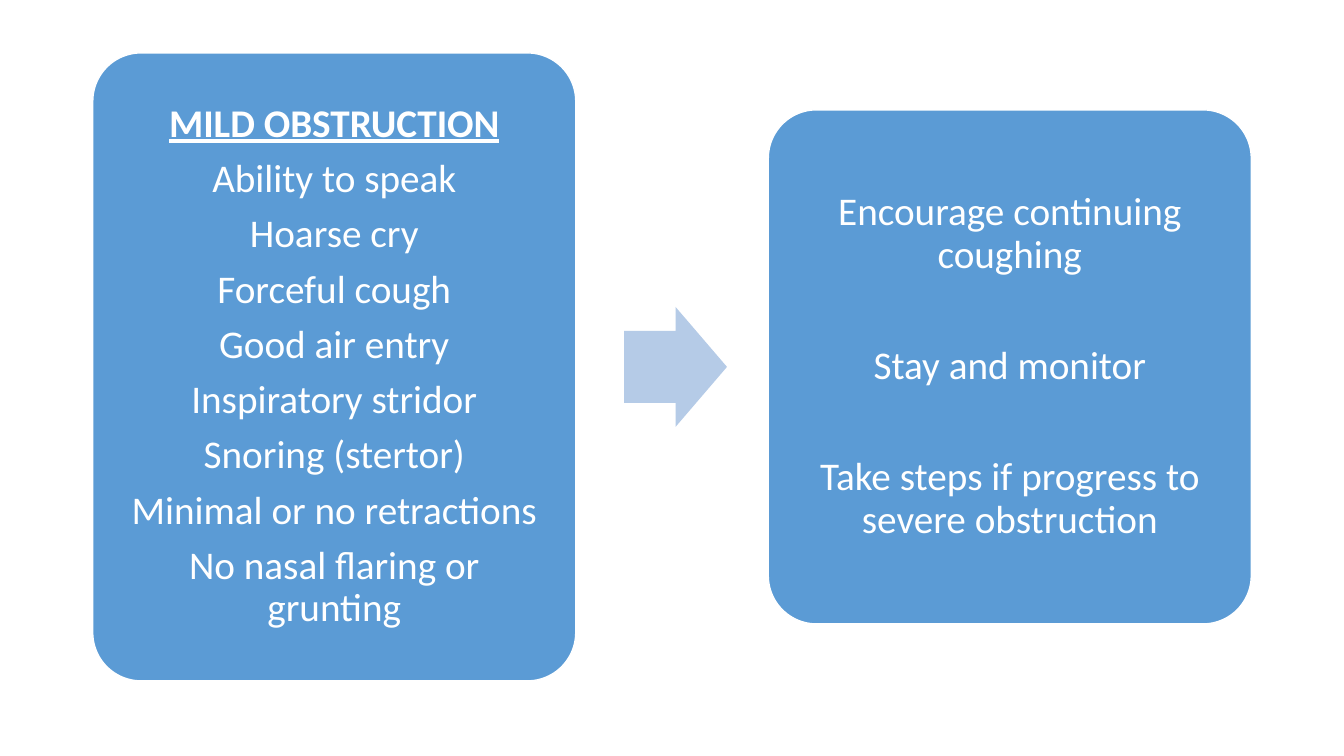
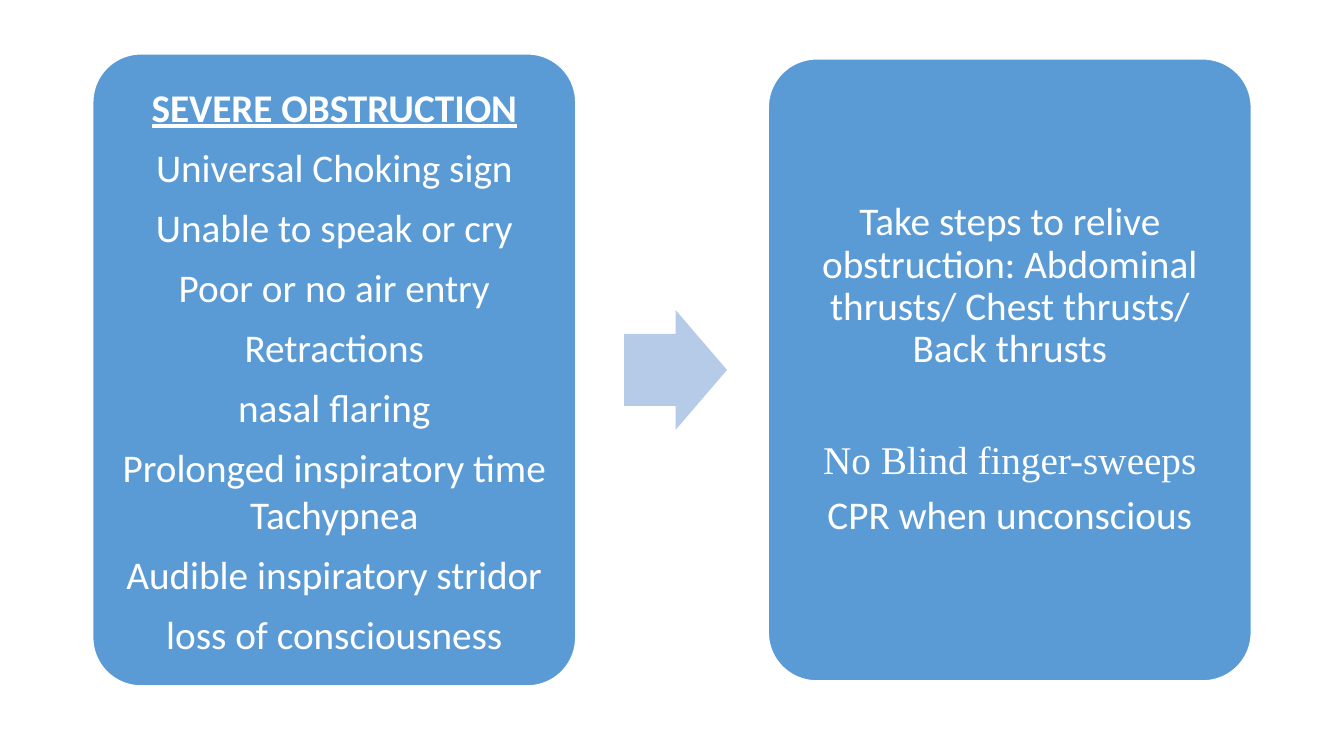
from dataclasses import dataclass

from pptx import Presentation
from pptx import util as u
from pptx.dml.color import RGBColor
from pptx.enum import shapes, text

PX = 9144
WHITE = RGBColor(0xFF, 0xFF, 0xFF)
BLUE = RGBColor(0x5B, 0x9B, 0xD5)
PALE_BLUE = RGBColor(0xB5, 0xCB, 0xE7)
BODY_FONT = "Calibri"
SIZE = 28
GAP = 9.25
WIDE_GAP = 49.25

SIGNS_LEFT, ACTIONS_LEFT, CARD_WIDTH = 92, 762, 479
ARROW_LEFT, ARROW_WIDTH, ARROW_HEIGHT = 619, 102, 119
INSET = 12


@dataclass(frozen=True)
class Line:
    text: str
    after: float = GAP
    heading: bool = False
    font: str = BODY_FONT


@dataclass(frozen=True)
class Card:
    left: int
    height: int
    lines: tuple[Line, ...]
    spacing: float = 0.9


@dataclass(frozen=True)
class Scene:
    middle: int
    signs: Card
    actions: Card


SCENES = (
    Scene(
        364,
        Card(SIGNS_LEFT, 623, (
            Line("MILD OBSTRUCTION", heading=True),
            Line("Ability to speak"),
            Line("Hoarse cry"),
            Line("Forceful cough"),
            Line("Good air entry"),
            Line("Inspiratory stridor"),
            Line("Snoring (stertor)"),
            Line("Minimal or no retractions"),
            Line("No nasal flaring or grunting"),
        )),
        Card(ACTIONS_LEFT, 510, (
            Line("Encourage continuing coughing", after=WIDE_GAP),
            Line("Stay and monitor", after=WIDE_GAP),
            Line("Take steps if progress to severe obstruction"),
        )),
    ),
    Scene(
        367,
        Card(SIGNS_LEFT, 627, (
            Line("SEVERE OBSTRUCTION", heading=True),
            Line("Universal Choking sign"),
            Line("Unable to speak or cry"),
            Line("Poor or no air entry"),
            Line("Retractions"),
            Line("nasal flaring"),
            Line("Prolonged inspiratory time", after=0),
            Line("Tachypnea"),
            Line("Audible inspiratory stridor"),
            Line("loss of consciousness"),
        ), spacing=1.0),
        Card(ACTIONS_LEFT, 617, (
            Line("Take steps to relive obstruction: Abdominal thrusts/ "
                 "Chest thrusts/ Back thrusts", after=WIDE_GAP),
            Line("No Blind finger-sweeps", font="Times New Roman"),
            Line("CPR when unconscious"),
        )),
    ),
)


def px(n: int) -> u.Emu:
    return u.Emu(n * PX)


def add_block(s, kind, left: int, middle: int, width: int, height: int,
              fill: RGBColor, adjustments: tuple[float, ...]):
    sp = s.shapes.add_shape(kind, px(left), px(middle) - px(height) // 2,
                            px(width), px(height))
    for i, value in enumerate(adjustments):
        sp.adjustments[i] = value
    sp.shadow.inherit = False
    sp.fill.solid()
    sp.fill.fore_color.rgb = fill
    sp.line.fill.background()
    return sp


def write(p, content: str, *, font: str = BODY_FONT, size: int = SIZE,
          color: RGBColor = WHITE, heading: bool = False,
          after: float = GAP, spacing: float = 0.9) -> None:
    p.alignment = text.PP_ALIGN.CENTER
    p.line_spacing = spacing
    p.space_after = u.Pt(after)
    r = p.add_run()
    r.text = content
    r.font.name = font
    r.font.size = u.Pt(size)
    r.font.color.rgb = color
    r.font.bold = heading
    r.font.underline = heading


def add_card(s, card: Card, middle: int) -> None:
    sp = add_block(s, shapes.MSO_SHAPE.ROUNDED_RECTANGLE, card.left, middle,
                   CARD_WIDTH, card.height, BLUE, (0.1,))
    sp.line.color.rgb = WHITE
    sp.line.width = u.Pt(1)
    tf = sp.text_frame
    tf.word_wrap = True
    tf.vertical_anchor = text.MSO_ANCHOR.MIDDLE
    tf.margin_left = tf.margin_right = px(INSET)
    tf.margin_top = tf.margin_bottom = px(INSET)
    for i, line in enumerate(card.lines):
        p = tf.add_paragraph() if i else tf.paragraphs[0]
        write(p, line.text, font=line.font, heading=line.heading,
              after=line.after, spacing=card.spacing)


def add_scene(prs, scene: Scene) -> None:
    s = prs.slides.add_slide(prs.slide_layouts[6])
    add_card(s, scene.signs, scene.middle)
    add_block(s, shapes.MSO_SHAPE.RIGHT_ARROW, ARROW_LEFT, scene.middle,
              ARROW_WIDTH, ARROW_HEIGHT, PALE_BLUE, (0.6, 0.5))
    add_card(s, scene.actions, scene.middle)


def main() -> None:
    prs = Presentation()
    prs.slide_width, prs.slide_height = px(1333), px(750)
    for scene in SCENES:
        add_scene(prs, scene)
    prs.save("out.pptx")


if __name__ == "__main__":
    main()
